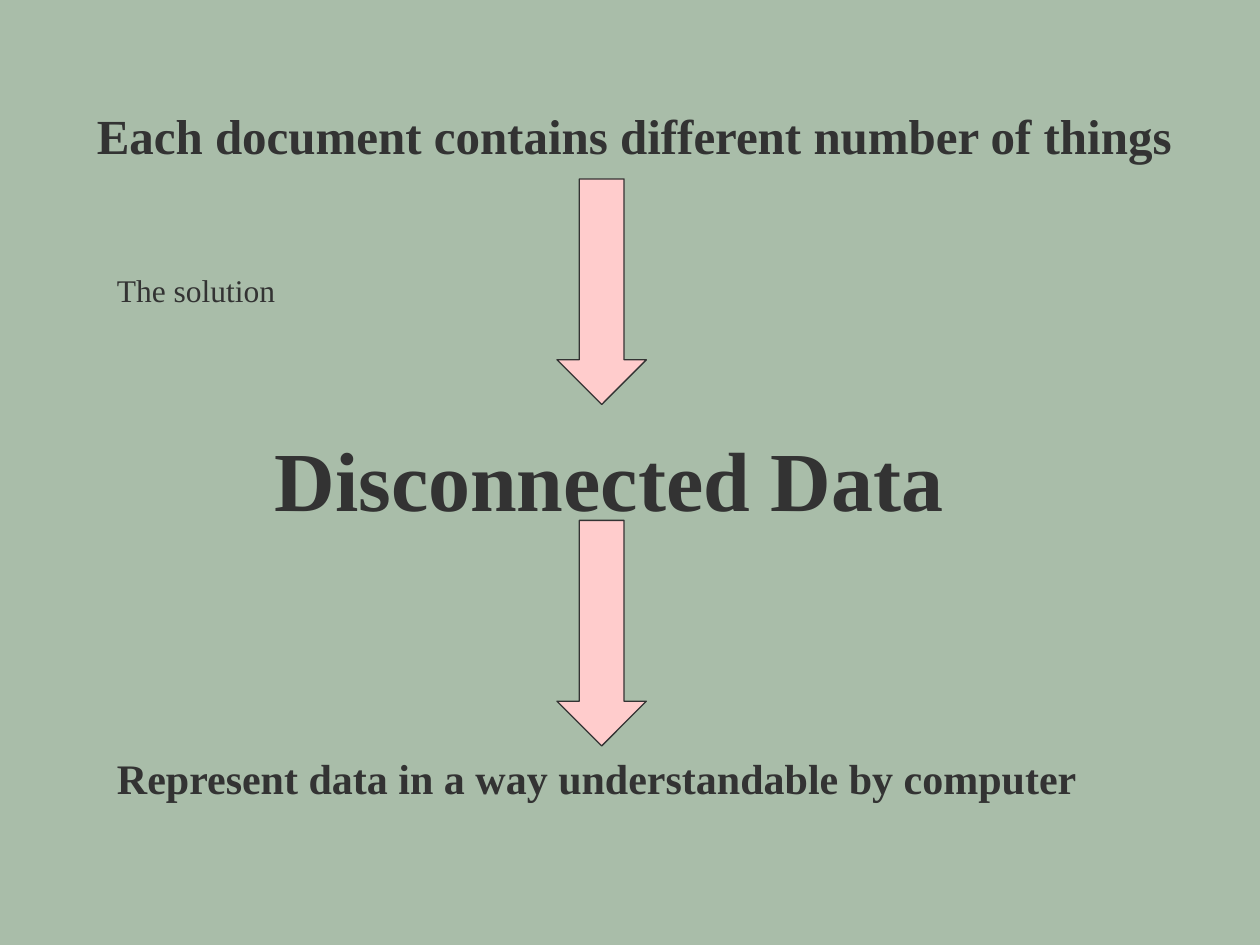
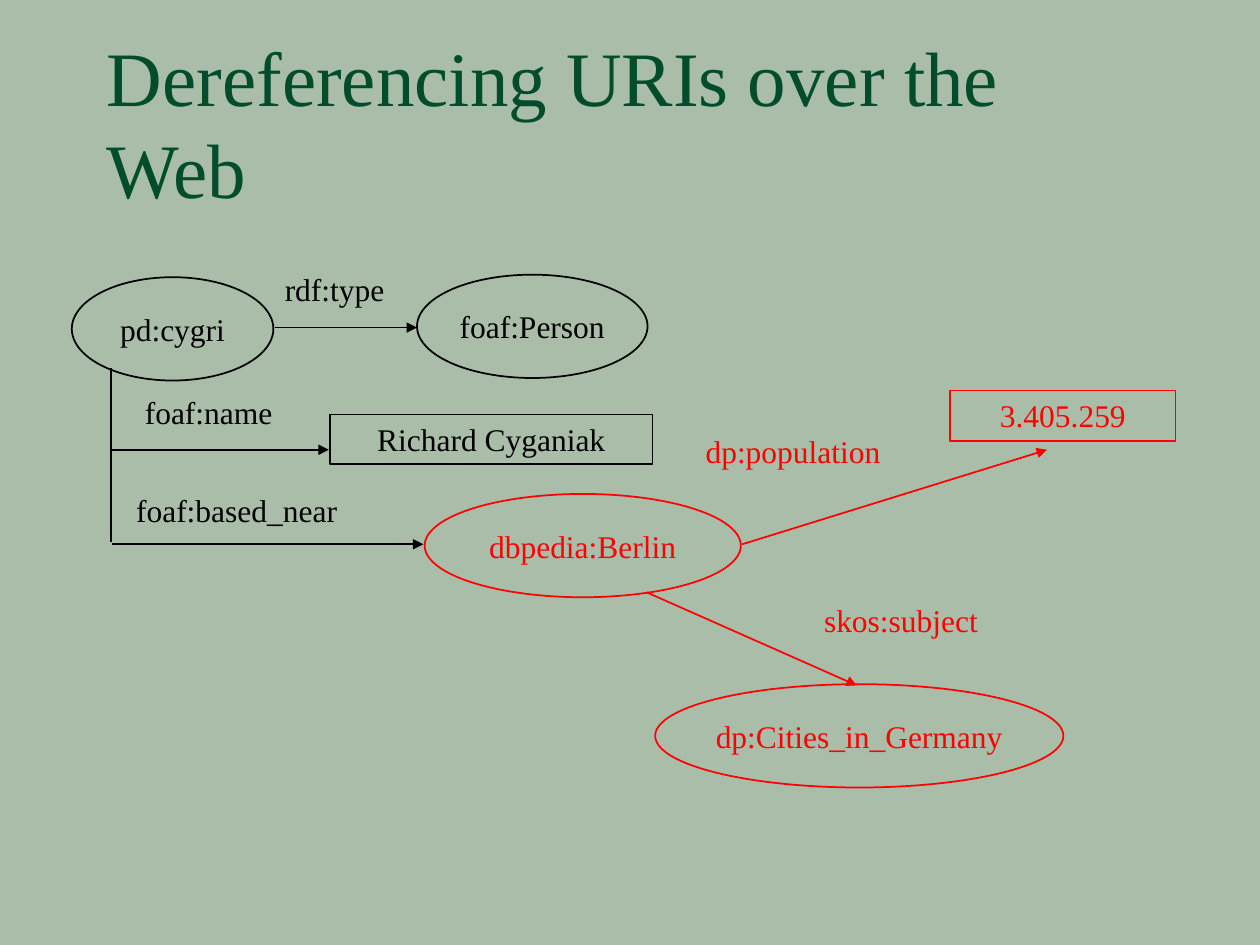
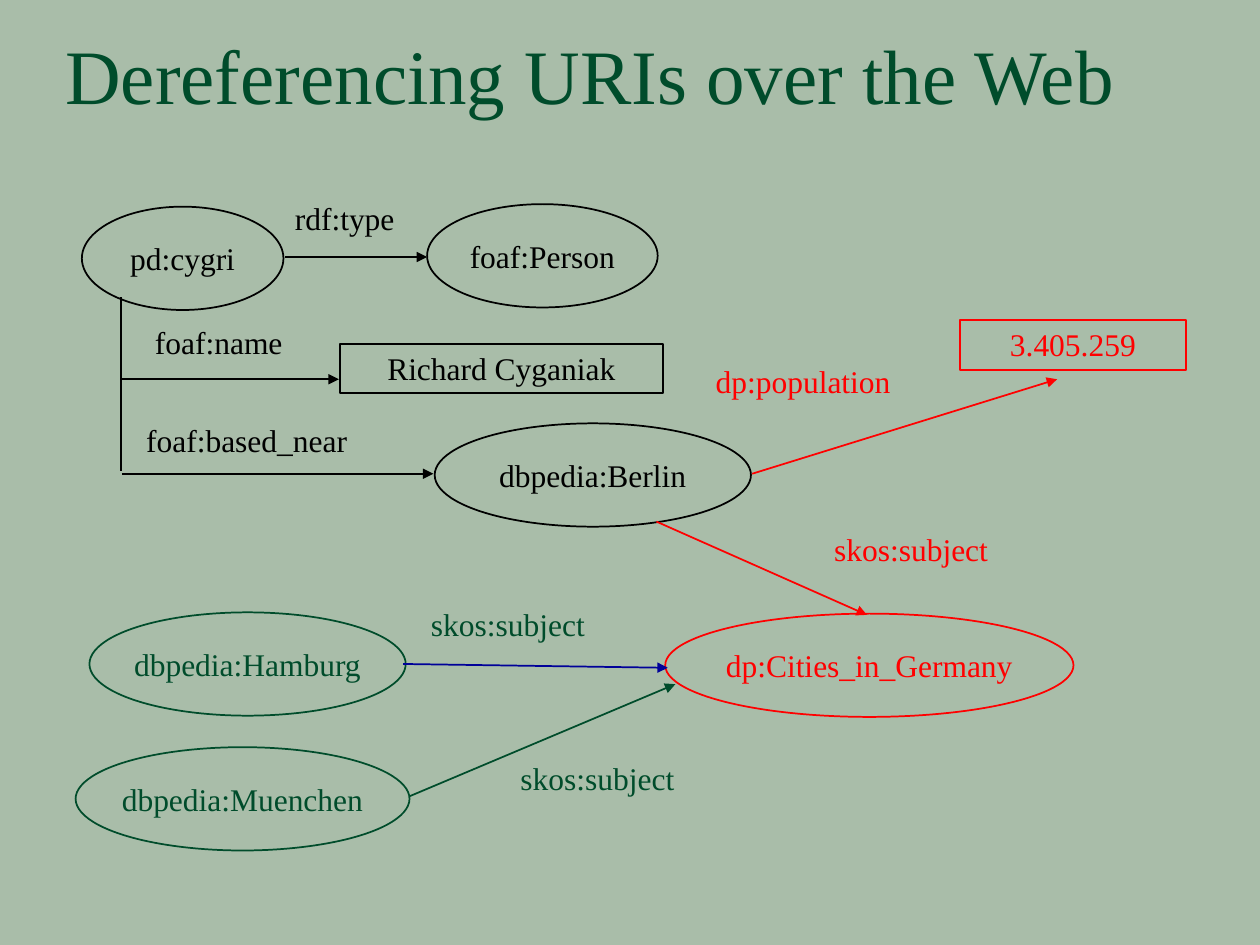
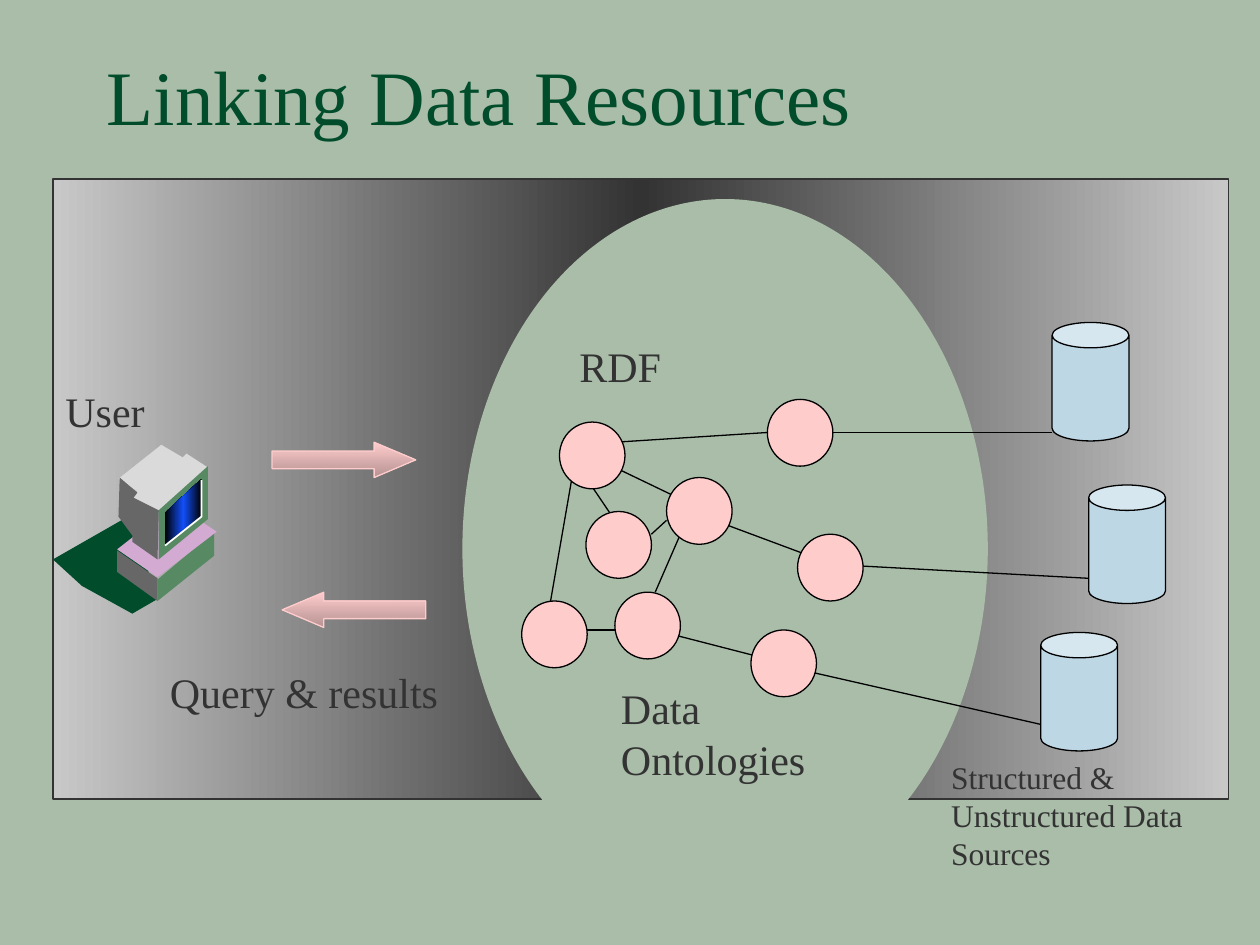
import pptx
import pptx.dml.color
import pptx.enum.shapes
import pptx.enum.text
import pptx.oxml.ns
import pptx.util
from lxml import etree

Inches = pptx.util.Inches
Shape = pptx.enum.shapes.MSO_SHAPE
Anchor = pptx.enum.text.MSO_ANCHOR
Align = pptx.enum.text.PP_ALIGN
qn = pptx.oxml.ns.qn

# Shared look
FONT = "Times New Roman"
SAGE, GREEN, INK = "A9BDA9", "004C2B", "333333"
PINK, SKY = "FFCCCC", "BDD7E5"
BLACK, RED, NAVY, WHITE = "000000", "FF0000", "000099", "FFFFFF"
INSET = (0.1, 0.05)
GRAPH_INSET = (0.09, 0.04)


def rgb(color):
    return pptx.dml.color.RGBColor.from_string(color)


def add_page(deck):
    page = deck.slides.add_slide(deck.slide_layouts[6])
    page.background.fill.solid()
    page.background.fill.fore_color.rgb = rgb(SAGE)
    return page


# Text
def set_text(shape, text, size, color, bold=False, align=Align.LEFT,
             anchor=Anchor.TOP, wrap=True, inset=INSET):
    frame = shape.text_frame
    frame.text = text
    frame.word_wrap = wrap
    frame.vertical_anchor = anchor
    frame.margin_left = frame.margin_right = Inches(inset[0])
    frame.margin_top = frame.margin_bottom = Inches(inset[1])
    for para in frame.paragraphs:
        para.alignment = align
        for span in para.runs:
            span.font.name = FONT
            span.font.size = pptx.util.Pt(size)
            span.font.bold = bold
            span.font.color.rgb = rgb(color)


def add_text(page, place, text, size, color=INK, **style):
    box = page.shapes.add_textbox(*map(Inches, place))
    set_text(box, text, size, color, **style)


def add_title(page, place, text):
    add_text(page, place, text, 44, GREEN, anchor=Anchor.BOTTOM)


# Shapes and lines
def set_gradient(shape, stops, angle=None):
    """Fill with (percent, colour) stops; no angle means outward from the centre."""
    shape.fill.gradient()
    gradient = shape._element.spPr.find(qn("a:gradFill"))
    for child in list(gradient):
        gradient.remove(child)
    stop_list = etree.SubElement(gradient, qn("a:gsLst"))
    for percent, color in stops:
        stop = etree.SubElement(stop_list, qn("a:gs"), pos=str(percent * 1000))
        etree.SubElement(stop, qn("a:srgbClr"), val=color)
    if angle is None:
        route = etree.SubElement(gradient, qn("a:path"), path="rect")
        etree.SubElement(route, qn("a:fillToRect"),
                         {side: "50000" for side in "ltrb"})
    else:
        etree.SubElement(gradient, qn("a:lin"), ang=str(angle * 60000), scaled="0")


def paint(shape, fill=None, line=None, width=0.75):
    shape.shadow.inherit = False
    if fill:
        shape.fill.solid()
        shape.fill.fore_color.rgb = rgb(fill)
    else:
        shape.fill.background()
    if line:
        shape.line.color.rgb = rgb(line)
        shape.line.width = pptx.util.Pt(width)
    else:
        shape.line.fill.background()


def add_shape(page, kind, place, fill=None, line=None, width=0.75):
    shape = page.shapes.add_shape(kind, *map(Inches, place))
    paint(shape, fill, line, width)
    return shape


def add_line(page, start, end, color=BLACK, width=0.75, arrow=False):
    line = page.shapes.add_connector(
        pptx.enum.shapes.MSO_CONNECTOR.STRAIGHT, *map(Inches, start + end))
    line.line.color.rgb = rgb(color)
    line.line.width = pptx.util.Pt(width)
    if arrow:
        etree.SubElement(line.line._get_or_add_ln(), qn("a:tailEnd"), type="triangle")
    etree.SubElement(line._element.spPr, qn("a:effectLst"))


def add_outline(page, points, fill=None, line=None, closed=True):
    corners = [(Inches(x), Inches(y)) for x, y in points]
    builder = page.shapes.build_freeform(*corners[0])
    builder.add_line_segments(corners[1:], close=closed)
    shape = builder.convert_to_shape()
    paint(shape, fill, line, 1)
    return shape


# RDF graph elements
def add_resource(page, place, name, color):
    ellipse = add_shape(page, Shape.OVAL, place, SAGE, color, 1)
    set_text(ellipse, name, 18, color, align=Align.CENTER, anchor=Anchor.MIDDLE,
             wrap=False, inset=GRAPH_INSET)


def add_literal(page, place, value, color):
    box = add_shape(page, Shape.RECTANGLE, place, None, color, 1)
    set_text(box, value, 18, color, align=Align.CENTER, inset=GRAPH_INSET)


def add_property(page, place, name, color):
    add_text(page, place, name, 18, color, wrap=False, inset=GRAPH_INSET)


def add_berlin_graph(page, dx, dy, berlin_color):
    def at(x, y, *size):
        return (x + dx, y + dy) + size

    for place, name, color in (
            (at(5.2, 5.43, 3.24, 0.82), "dp:Cities_in_Germany", RED),
            (at(3.37, 3.92, 2.51, 0.82), "dbpedia:Berlin", berlin_color),
            (at(3.31, 2.18, 1.83, 0.82), "foaf:Person", BLACK),
            (at(0.57, 2.2, 1.6, 0.82), "pd:cygri", BLACK)):
        add_resource(page, place, name, color)
    add_literal(page, at(7.54, 3.1, 1.79, 0.4), "3.405.259", RED)
    add_literal(page, at(2.62, 3.29, 2.56, 0.39), "Richard Cyganiak", BLACK)
    for place, name, color in (
            (at(5.51, 3.39, 1.6, 0.4), "dp:population", RED),
            (at(6.45, 4.73, 1.44, 0.4), "skos:subject", RED),
            (at(1.06, 3.08, 1.2, 0.39), "foaf:name", BLACK),
            (at(0.99, 3.86, 1.79, 0.39), "foaf:based_near", BLACK),
            (at(2.17, 2.1, 0.98, 0.39), "rdf:type", BLACK)):
        add_property(page, place, name, color)
    add_line(page, at(0.88, 2.92), at(0.88, 4.3), BLACK, 1)
    for start, end, color in (
            (at(5.13, 4.7), at(6.8, 5.44), RED),
            (at(5.89, 4.32), at(8.31, 3.57), RED),
            (at(0.88, 3.57), at(2.61, 3.57), BLACK),
            (at(0.89, 4.32), at(3.36, 4.32), BLACK),
            (at(2.18, 2.6), at(3.31, 2.6), BLACK)):
        add_line(page, start, end, color, 1, arrow=True)


# Linked data elements
def add_computer(page):
    for color, points in (
            (GREEN, [(1.24, 4.76), (1.05, 4.87), (0.65, 4.65), (0.42, 4.44), (1.05, 4.08)]),
            ("676767", [(0.93, 4.37), (0.93, 4.54), (1.25, 4.77), (1.25, 4.59)]),
            ("578963", [(1.25, 4.77), (1.7, 4.41), (1.7, 4.22), (1.25, 4.6)]),
            ("D2AAD2", [(0.93, 4.36), (1.39, 4), (1.72, 4.22), (1.25, 4.58)]),
            ("DADADA", [(0.94, 3.8), (1.09, 3.9), (1.05, 3.94), (1.23, 4.08),
                        (1.65, 3.71), (1.48, 3.6), (1.45, 3.63), (1.28, 3.53)]),
            ("676767", [(0.95, 3.79), (0.94, 4.1), (1.05, 4.25), (1.05, 4.3),
                        (1.25, 4.44), (1.26, 4.05), (1.06, 3.95), (1.09, 3.91)]),
            ("578963", [(1.65, 3.7), (1.65, 4.12), (1.26, 4.44), (1.26, 4.05)])):
        add_outline(page, points, color)
    screen = add_outline(page, [(1.6, 3.8), (1.6, 4.09), (1.31, 4.33), (1.31, 4.07)])
    set_gradient(screen, [(0, "114FFB"), (100, BLACK)])
    add_outline(page, [(1.6, 3.81), (1.6, 4.1), (1.31, 4.33)], line=WHITE, closed=False)


def add_exchange_arrow(page, left, top, flipped=False):
    arrow = add_shape(page, Shape.RIGHT_ARROW, (left, top, 1.14, 0.28), PINK, PINK)
    arrow.adjustments[1] = 1.18
    set_gradient(arrow, [(0, PINK), (100, "B69292")], 90)
    if flipped:
        arrow._element.spPr.xfrm.set("flipH", "1")


def add_database(page, left, top):
    can = add_shape(page, Shape.CAN, (left, top, 0.61, 0.94), SKY, BLACK)
    can.adjustments[0] = 0.33


# Slides
def build_problem(deck):
    page = add_page(deck)
    add_text(page, (2.08, 3.34, 6.92, 0.91), "Disconnected Data", 48, bold=True)
    add_text(page, (0.67, 0.79, 9, 0.88),
             "Each document contains different number of things", 28, bold=True)
    add_text(page, (0.83, 2.1, 2.92, 0.4), "The solution", 18)
    add_text(page, (0.83, 5.92, 8.58, 0.5),
             "Represent data in a way understandable by computer", 24, bold=True)
    for top in (1.96, 4.67):
        arrow = add_shape(page, Shape.RIGHT_ARROW, (3.88, top, 1.79, 0.71), PINK, INK)
        arrow.rotation = 90


def build_dereferencing(deck):
    page = add_page(deck)
    add_title(page, (0.75, 0.5, 8.5, 1.25), "Dereferencing URIs over the Web")
    add_berlin_graph(page, 0, 0, RED)


def build_more_cities(deck):
    page = add_page(deck)
    add_title(page, (0.42, -0.25, 9, 1.25), "Dereferencing URIs over the Web")
    add_berlin_graph(page, 0.08, -0.56, BLACK)
    add_resource(page, (0.71, 4.86, 2.51, 0.82), "dbpedia:Hamburg", GREEN)
    add_resource(page, (0.6, 5.93, 2.65, 0.82), "dbpedia:Muenchen", GREEN)
    add_line(page, (3.2, 5.27), (5.3, 5.3), NAVY, 1, arrow=True)
    add_line(page, (3.25, 6.32), (5.36, 5.43), GREEN, 1, arrow=True)
    for left, top in ((3.33, 4.76), (4.04, 5.98)):
        add_property(page, (left, top, 1.41, 0.39), "skos:subject", GREEN)


def build_linking(deck):
    page = add_page(deck)
    panel = add_shape(page, Shape.RECTANGLE, (0.42, 1.42, 9.33, 4.92), INK, INK, 1)
    set_gradient(panel, [(0, "C8C8C8"), (50, INK), (100, "C8C8C8")], 0)
    add_title(page, (0.75, 0.5, 8.5, 0.67), "Linking Data Resources")
    add_shape(page, Shape.OVAL, (3.67, 1.58, 4.17, 5.55), SAGE)

    # Databases, links and nodes
    for left, top in ((8.64, 3.85), (8.35, 2.56)):
        add_database(page, left, top)
    for start, end in (
            ((6.33, 3.43), (8.35, 3.43)), ((6.61, 4.48), (8.64, 4.59)),
            ((6.33, 5.31), (8.35, 5.77)), ((5.2, 4.7), (5.4, 4.24)),
            ((5.17, 4.24), (5.29, 4.13)), ((4.88, 3.71), (5.4, 3.96)),
            ((4.88, 4.13), (4.65, 3.79)), ((4.54, 5), (4.96, 5)),
            ((4.37, 4.77), (4.54, 3.79)), ((4.88, 3.51), (6.13, 3.43)),
            ((5.67, 4.13), (6.61, 4.48)), ((5.2, 5), (6.13, 5.24))):
        add_line(page, start, end)
    for left, top in ((4.44, 3.35), (6.09, 3.17), (6.33, 4.24), (5.96, 5),
                      (5.29, 3.79), (4.88, 4.7), (4.14, 4.77), (4.65, 4.06)):
        add_shape(page, Shape.OVAL, (left, top, 0.52, 0.53), PINK, BLACK)
    add_database(page, 8.26, 5.02)

    # User side and labels
    add_exchange_arrow(page, 2.16, 3.51)
    add_exchange_arrow(page, 2.24, 4.7, flipped=True)
    for place, text, size in (
            ((0.42, 3.01, 1.58, 0.55), "User", 24),
            ((4.83, 5.37, 1.89, 0.79), "Data\nOntologies", 24),
            ((4.5, 2.65, 2.17, 0.91), "RDF", 24),
            ((1.25, 5.24, 2.95, 0.53), "Query & results", 24),
            ((7.45, 5.97, 2.22, 0.53), "Structured & Unstructured Data Sources", 18)):
        add_text(page, place, text, size)
    add_computer(page)


def main():
    deck = pptx.Presentation()
    deck.slide_width, deck.slide_height = Inches(10), Inches(7.5)
    build_problem(deck)
    build_dereferencing(deck)
    build_more_cities(deck)
    build_linking(deck)
    deck.save("out.pptx")


if __name__ == "__main__":
    main()
